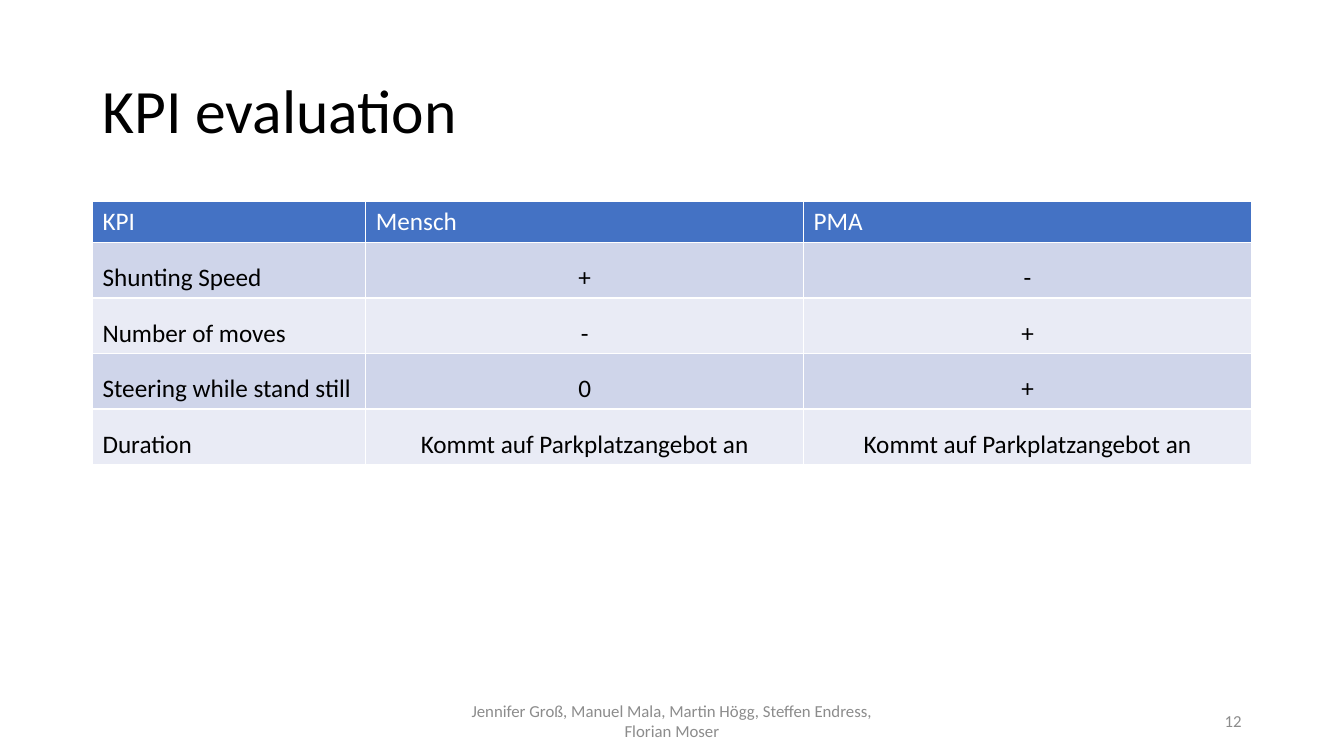
"""Build the KPI evaluation slide: a title, a comparison table and a footer."""
from lxml.etree import SubElement
from pptx import Presentation
from pptx.dml.color import RGBColor
from pptx.enum.text import MSO_ANCHOR as ANCHOR, PP_ALIGN as ALIGN
from pptx.oxml.ns import qn
from pptx.util import Cm, Pt

COLORS = {
    "text": "000000",
    "white": "FFFFFF",
    "footer": "8C8C8C",
    "header": "4472C4",
    "odd": "CFD5EA",
    "even": "E9EBF5",
}
FONT = "Calibri"
ROWS = [
    ("KPI", "Mensch", "PMA"),
    ("Shunting Speed", "+", "-"),
    ("Number of moves", "-", "+"),
    ("Steering while stand still", "0", "+"),
    ("Duration", "Kommt auf Parkplatzangebot an", "Kommt auf Parkplatzangebot an"),
]
COL_WIDTHS = [6.89, 11.03, 11.29]
ROW_HEIGHT = 1.03


def write(tf, text, size, color, align, spacing=1.0):
    tf.text = text
    p = tf.paragraphs[0]
    p.alignment = align
    p.line_spacing = spacing
    r = p.runs[0]
    r.font.name = FONT
    r.font.size = Pt(size)
    r.font.bold = False
    r.font.color.rgb = RGBColor.from_string(COLORS[color])


def add_borders(cell):
    tc_pr = cell._tc.get_or_add_tcPr()
    for side in ("lnL", "lnR", "lnT", "lnB"):
        ln = SubElement(tc_pr, qn(f"a:{side}"), w=str(Pt(1)))
        fill = SubElement(ln, qn("a:solidFill"))
        SubElement(fill, qn("a:srgbClr"), val=COLORS["white"])


prs = Presentation()
prs.slide_width = Cm(33.87)
prs.slide_height = Cm(19.05)
s = prs.slides.add_slide(prs.slide_layouts[6])

texts = [
    ("KPI evaluation", (2.33, 1.01, 29.21, 3.68), 44, "text", ALIGN.LEFT, 0.9),
    ("Jennifer Groß, Manuel Mala, Martin Högg, Steffen Endress, Florian Moser",
     (11.22, 17.66, 11.43, 1.01), 12, "footer", ALIGN.CENTER, 1.0),
    ("12", (23.92, 17.66, 7.62, 1.01), 12, "footer", ALIGN.RIGHT, 1.0),
]
for text, box, size, color, align, spacing in texts:
    tf = s.shapes.add_textbox(*map(Cm, box)).text_frame
    tf.word_wrap = True
    tf.vertical_anchor = ANCHOR.MIDDLE
    write(tf, text, size, color, align, spacing)

table = s.shapes.add_table(
    len(ROWS), len(COL_WIDTHS), Cm(2.33), Cm(5.08),
    Cm(sum(COL_WIDTHS)), Cm(ROW_HEIGHT * len(ROWS))).table
for col, width in zip(table.columns, COL_WIDTHS):
    col.width = Cm(width)

for i, values in enumerate(ROWS):
    table.rows[i].height = Cm(ROW_HEIGHT)
    is_header = i == 0
    band = "header" if is_header else "odd" if i % 2 else "even"
    for j, value in enumerate(values):
        cell = table.cell(i, j)
        add_borders(cell)
        cell.fill.solid()
        cell.fill.fore_color.rgb = RGBColor.from_string(COLORS[band])
        cell.vertical_anchor = ANCHOR.TOP if is_header else ANCHOR.MIDDLE
        write(cell.text_frame, value, 18,
              "white" if is_header else "text",
              ALIGN.LEFT if is_header or j == 0 else ALIGN.CENTER,
              1.0 if is_header else 1.5)

prs.save("out.pptx")
